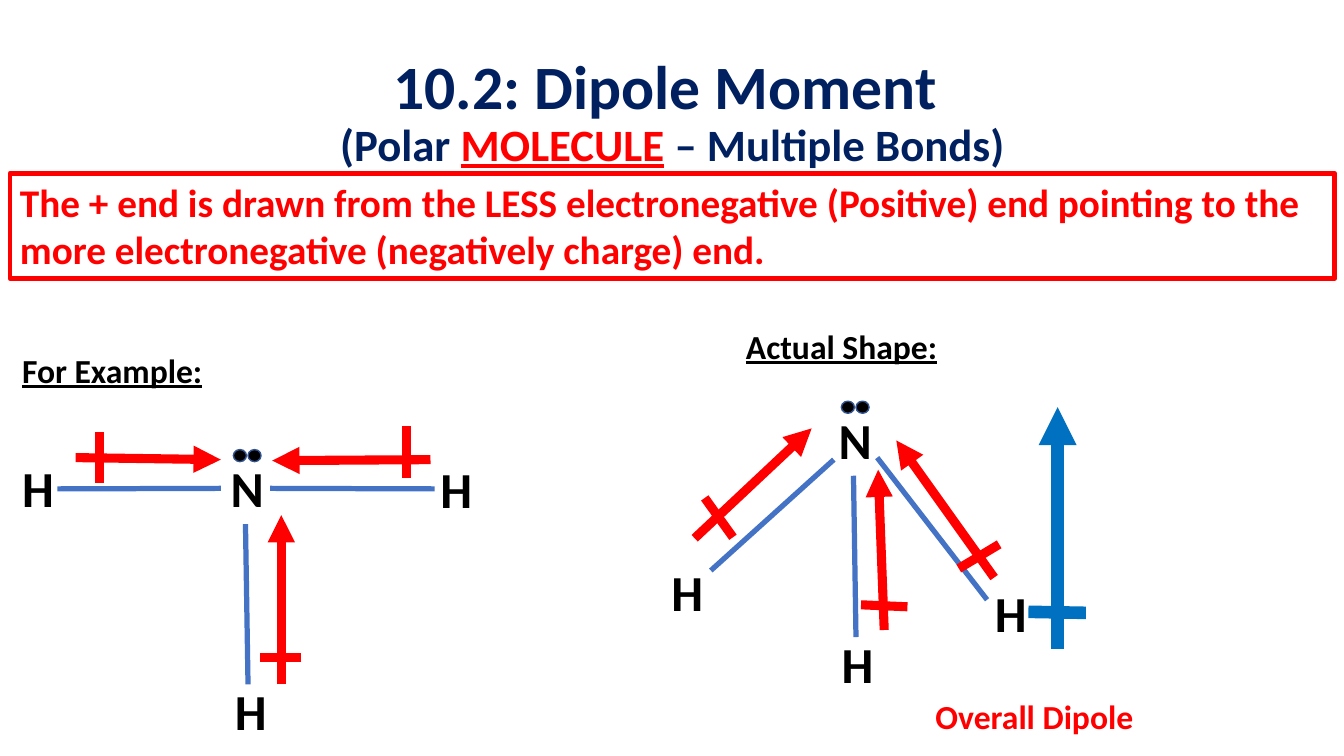
from pptx import Presentation
from pptx.dml.color import RGBColor
from pptx.enum.shapes import MSO_CONNECTOR, MSO_SHAPE
from pptx.enum.text import MSO_ANCHOR, MSO_AUTO_SIZE, PP_ALIGN
from pptx.oxml.ns import qn
from pptx.util import Inches, Pt
from lxml.etree import SubElement

COLORS = {"navy": "002060", "red": "FF0000", "black": "000000",
          "bond": "4472C4", "blue": "0070C0", "rim": "325491"}
TOP, LEFT, BOTTOM, RIGHT = range(4)


class Canvas:
    """Draws on one slide; lengths are columns and rows of a 0.1 inch grid."""
    CELL = Inches(0.1)
    FONT = "Calibri"

    def __init__(self, prs):
        self.s = prs.slides.add_slide(prs.slide_layouts[6])

    def grid(self, *cells):
        return [round(c * self.CELL) for c in cells]

    def color(self, name):
        return RGBColor.from_string(COLORS[name])

    def run(self, p, text, size, color, **extra):
        r = p.add_run()
        r.text = text
        fmt = {"name": self.FONT, "size": Pt(size), "bold": True, **extra}
        for key, value in fmt.items():
            setattr(r.font, key, value)
        r.font.color.rgb = self.color(color)

    def frame(self, sp, **extra):
        tf = sp.text_frame
        fmt = {"word_wrap": True, "auto_size": MSO_AUTO_SIZE.SHAPE_TO_FIT_TEXT,
               "vertical_anchor": MSO_ANCHOR.TOP, **extra}
        for key, value in fmt.items():
            setattr(tf, key, value)
        p = tf.paragraphs[0]
        p.alignment = PP_ALIGN.LEFT
        return p

    def text(self, box, text, size, color="black", **extra):
        sp = self.s.shapes.add_textbox(*self.grid(*box))
        self.run(self.frame(sp), text, size, color, **extra)
        return sp

    def title(self, box, first, second):
        sp = self.s.shapes.add_textbox(*self.grid(*box))
        p = self.frame(sp, auto_size=MSO_AUTO_SIZE.NONE,
                       vertical_anchor=MSO_ANCHOR.MIDDLE)
        p.alignment, p.line_spacing = PP_ALIGN.CENTER, 0.9
        self.run(p, first, 44, "navy")
        p.add_line_break()
        for text, color, underline in second:
            self.run(p, text, 32, color, underline=underline)

    def shape(self, kind, box, line, width, fill=None):
        sp = self.s.shapes.add_shape(kind, *self.grid(*box))
        sp.shadow.inherit = False
        if fill:
            sp.fill.solid()
            sp.fill.fore_color.rgb = self.color(fill)
        else:
            sp.fill.background()
        sp.line.color.rgb = self.color(line)
        sp.line.width = Pt(width)
        return sp

    def callout(self, box, text):
        sp = self.shape(MSO_SHAPE.RECTANGLE, box, "red", 3.5)
        self.run(self.frame(sp), text, 28, "red")

    def line(self, start, end, color, width, arrow=False):
        c = self.s.shapes.add_connector(MSO_CONNECTOR.STRAIGHT,
                                        *self.grid(*start, *end))
        c.line.color.rgb = self.color(color)
        c.line.width = Pt(width)
        if arrow:
            SubElement(c.line._get_or_add_ln(), qn("a:tailEnd"), type="triangle")
        SubElement(c._element.spPr, qn("a:effectLst"))
        return c

    def dipole(self, arrow, bar, color="red", width=6.5):
        self.line(*arrow, color, width, arrow=True)
        self.line(*bar, color, width)

    def atom(self, symbol, x, y):
        return self.text((x, y, 4.9, 7.1), symbol, 36)

    def ammonia(self, nitrogen, hydrogens, bonds, dipoles):
        x, y = nitrogen
        n = self.atom("N", x, y)
        for dx in (1.25, 2.7):  # lone pair
            self.shape(MSO_SHAPE.OVAL, (x + dx, y - 0.3, 1.3, 1.2), "rim", 1, "black")
        for place in hydrogens:
            self.atom("H", *place)
        for start, end, side in bonds:
            c = self.line(start, end, "bond", 3.75)
            if side is not None:
                c.begin_connect(n, side)
        for arrow, bar in dipoles:
            self.dipole(arrow, bar)


def main():
    prs = Presentation()
    prs.slide_width, prs.slide_height = Inches(13.33), Inches(7.5)
    s = Canvas(prs)

    # Heading and rule
    s.title((9.2, 4, 115, 14.5), "10.2: Dipole Moment ",
            [("(Polar ", "navy", False), ("MOLECULE", "red", True),
             (" – Multiple Bonds)", "navy", False)])
    s.callout((1, 17.2, 131.4, 10.4),
              "The + end is drawn from the LESS electronegative (Positive) end "
              "pointing to the more electronegative (negatively charge) end.")

    # Flat drawing
    s.text((1.2, 34.2, 20.9, 5), "For Example:", 24, underline=True)
    s.ammonia(
        (21.9, 44.9), [(22.3, 67), (42.7, 45), (1.2, 44.9)],
        bonds=[((26.9, 48.4), (43.1, 48.5), RIGHT),
               ((21.9, 48.4), (5.7, 48.5), LEFT),
               ((24.4, 51.9), (24.6, 67.9), BOTTOM)],
        dipoles=[(((42.7, 45.6), (27, 45.7)), ((40.3, 47.4), (40.3, 42.3))),
                 (((27.9, 67.9), (27.9, 51.1)), ((29.9, 65.2), (25.8, 65.2))),
                 (((7.5, 45.4), (21.9, 45.6)), ((9.9, 47.9), (9.9, 42.9)))])

    # Actual shape
    s.text((73, 31.8, 22.1, 5), "Actual Shape:", 24, underline=True)
    s.ammonia(
        (82.2, 40.1), [(82.5, 62.3), (97.7, 57.3), (65.6, 55.2)],
        bonds=[((87, 45.4), (97.9, 59.5), None),
               ((82.7, 45.6), (70.5, 56.6), None),
               ((84.7, 47.2), (84.9, 63.2), BOTTOM)],
        dipoles=[(((98.6, 57.3), (88.9, 43.7)), ((95.1, 56.4), (99.1, 54))),
                 (((87.7, 62.5), (87.1, 46.6)), ((90, 60.2), (85.4, 60))),
                 (((68.9, 53.4), (80.5, 42.5)), ((72.7, 53.3), (69.9, 49.4)))])

    # Overall dipole
    s.dipole(((104.9, 64.4), (104.9, 40.4)), ((102, 60.7), (107.7, 60.8)), "blue", 9)
    s.text((91.8, 68.5, 22.1, 5), "Overall Dipole", 24, "red")

    prs.save("out.pptx")


if __name__ == "__main__":
    main()
